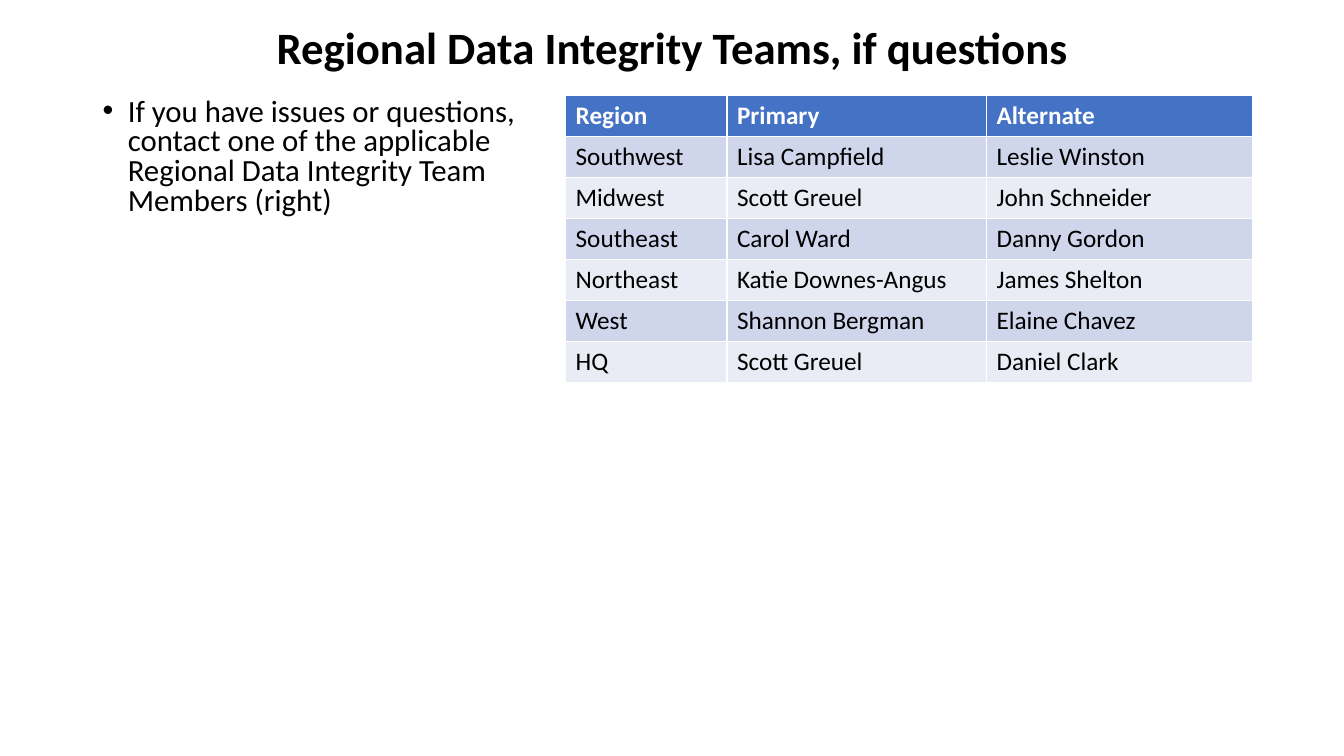
from lxml.etree import SubElement
from pptx import Presentation
from pptx.dml.color import RGBColor
from pptx.enum.text import MSO_ANCHOR as Anchor, PP_ALIGN as Align
from pptx.oxml.ns import qn
from pptx.util import Inches, Pt

BLACK = RGBColor(0x00, 0x00, 0x00)
WHITE = RGBColor(0xFF, 0xFF, 0xFF)
HEADER_BLUE = RGBColor(0x44, 0x72, 0xC4)
BAND_COLORS = (RGBColor(0xE9, 0xEB, 0xF5), RGBColor(0xCF, 0xD5, 0xEA))
FONT = "Calibri"

SLIDE_WIDTH, SLIDE_HEIGHT = 13.33, 7.5
LEFT, CONTENT_WIDTH = 0.92, 11.5
TABLE_LEFT, TABLE_TOP = 5.61, 0.95
COLUMN_SHARES = (0.235, 0.378, 0.387)
ROW_HEIGHT = 0.406

TEAMS = (
    ("Region", "Primary", "Alternate"),
    ("Southwest", "Lisa Campfield", "Leslie Winston"),
    ("Midwest", "Scott Greuel", "John Schneider"),
    ("Southeast", "Carol Ward", "Danny Gordon"),
    ("Northeast", "Katie Downes-Angus", "James Shelton"),
    ("West", "Shannon Bergman", "Elaine Chavez"),
    ("HQ", "Scott Greuel", "Daniel Clark"),
)


def write_text(text_frame, text, size, color=BLACK, bold=False):
    text_frame.text = text
    paragraph = text_frame.paragraphs[0]
    font = paragraph.runs[0].font
    font.name, font.size, font.bold = FONT, Pt(size), bold
    font.color.rgb = color
    return paragraph


def add_text_box(slide, box):
    text_frame = slide.shapes.add_textbox(*map(Inches, box)).text_frame
    text_frame.word_wrap = True
    return text_frame


def add_title(slide, box):
    text_frame = add_text_box(slide, box)
    text_frame.vertical_anchor = Anchor.MIDDLE
    paragraph = write_text(
        text_frame, "Regional Data Integrity Teams, if questions", 32, bold=True)
    paragraph.alignment = Align.CENTER
    paragraph.line_spacing = 0.9


def add_instruction(slide, box):
    paragraph = write_text(
        add_text_box(slide, box),
        "If you have issues or questions, contact one of the applicable "
        "Regional Data Integrity Team Members (right)", 22)
    paragraph.line_spacing = 0.8
    paragraph.space_before = Pt(10)
    properties = paragraph._p.get_or_add_pPr()
    indent = Inches(0.25)
    properties.set("marL", str(indent))
    properties.set("indent", str(-indent))
    SubElement(properties, qn("a:buFont"), typeface="Arial")
    SubElement(properties, qn("a:buChar"), char="•")


def add_team_table(slide, box):
    table = slide.shapes.add_table(
        len(TEAMS), len(COLUMN_SHARES), *map(Inches, box)).table
    for column, share in zip(table.columns, COLUMN_SHARES):
        column.width = Inches(box[2] * share)
    for row_index, team in enumerate(TEAMS):
        is_header = row_index == 0
        for column_index, text in enumerate(team):
            cell = table.cell(row_index, column_index)
            cell.fill.solid()
            cell.fill.fore_color.rgb = (
                HEADER_BLUE if is_header else BAND_COLORS[row_index % 2])
            if not is_header and column_index > 0:
                cell.vertical_anchor = Anchor.BOTTOM
            write_text(cell.text_frame, text, 18,
                       WHITE if is_header else BLACK, is_header)


def main():
    presentation = Presentation()
    presentation.slide_width = Inches(SLIDE_WIDTH)
    presentation.slide_height = Inches(SLIDE_HEIGHT)
    slide = presentation.slides.add_slide(presentation.slide_layouts[6])
    add_title(slide, (LEFT, 0, CONTENT_WIDTH, 0.99))
    add_instruction(slide, (LEFT, 0.93, 4.47, 1.41))
    add_team_table(slide, (TABLE_LEFT, TABLE_TOP,
                           LEFT + CONTENT_WIDTH - TABLE_LEFT,
                           ROW_HEIGHT * len(TEAMS)))
    presentation.save("out.pptx")


if __name__ == "__main__":
    main()
